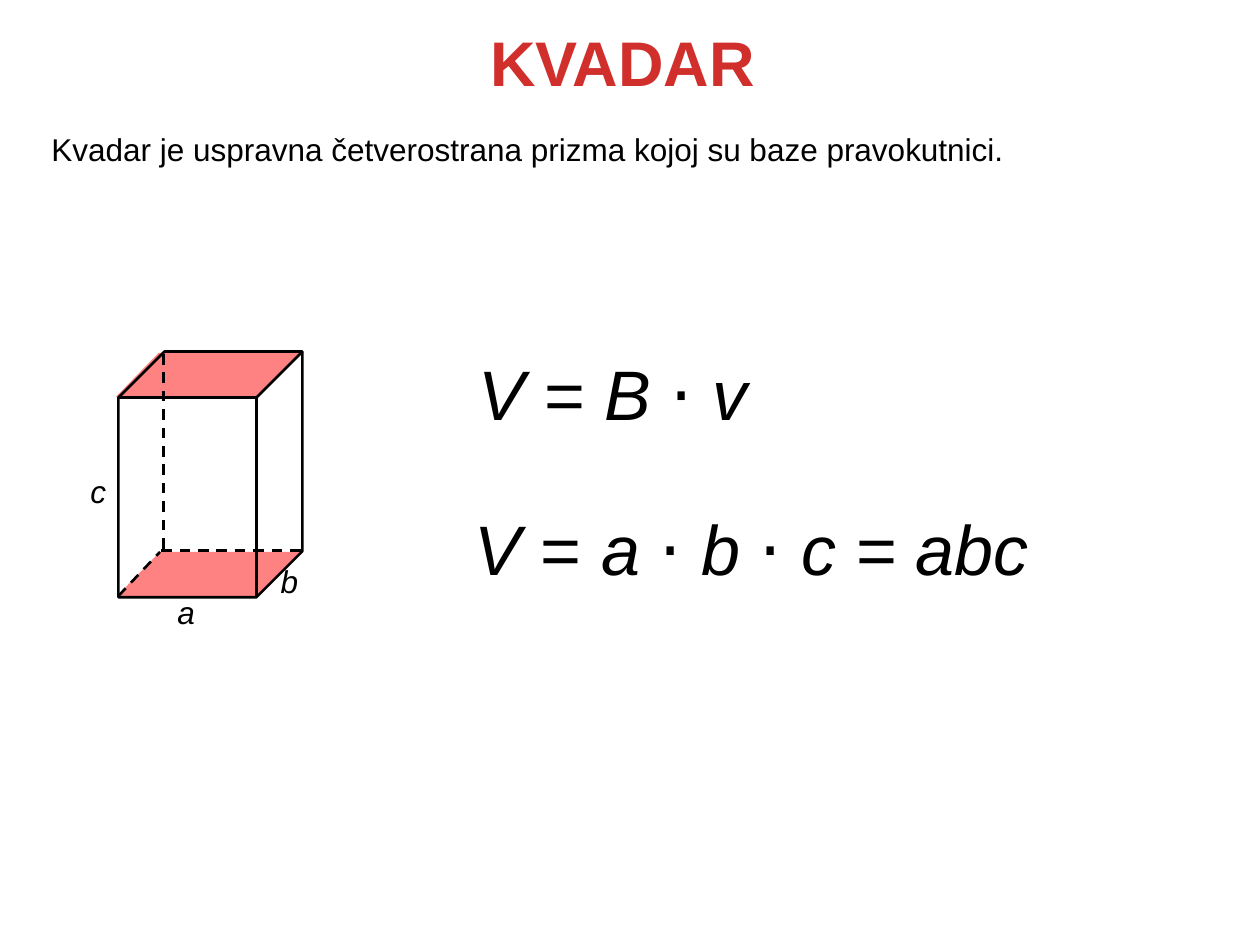
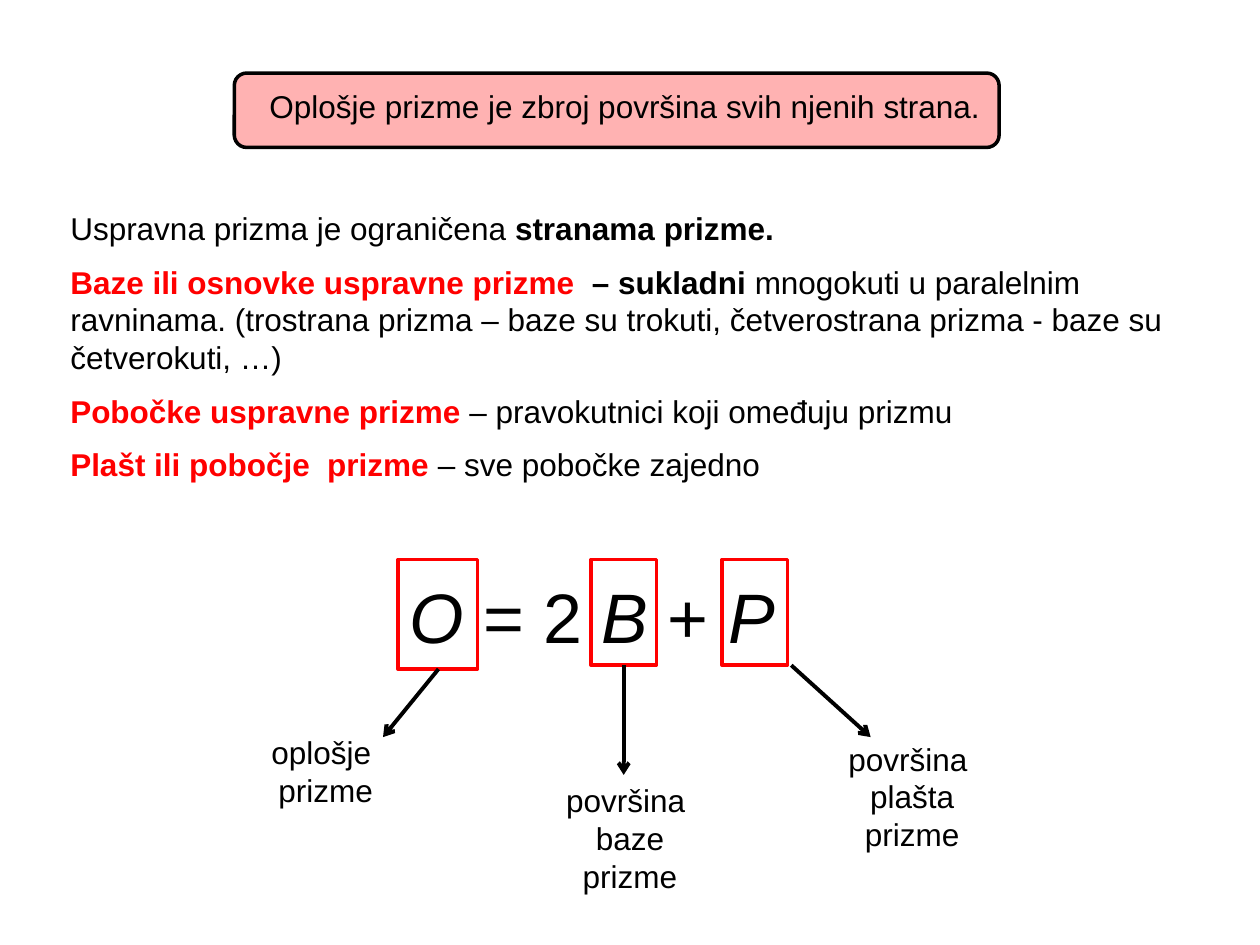
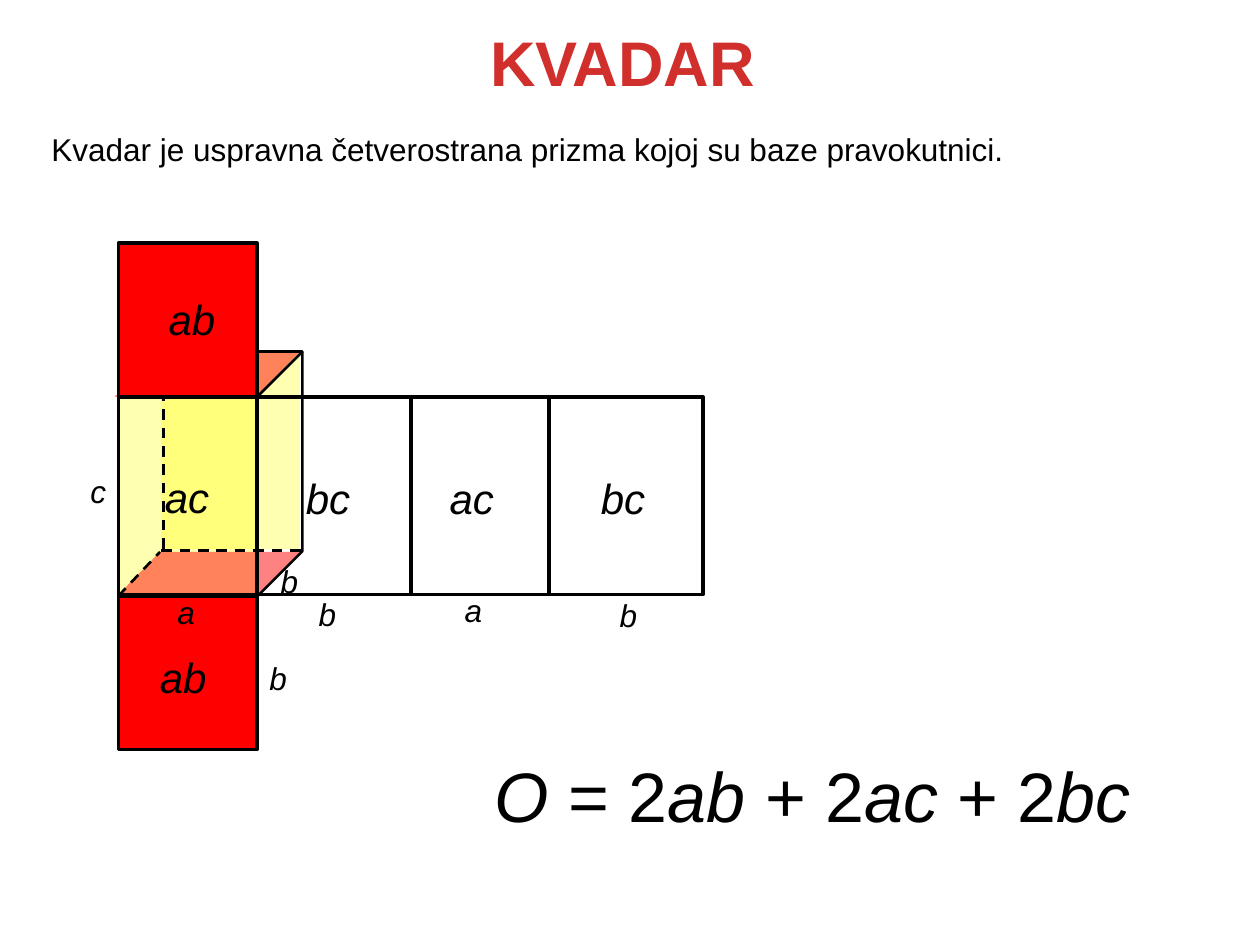
from pptx import Presentation
from pptx.dml.color import RGBColor
from pptx.enum.dml import MSO_LINE
from pptx.enum.shapes import MSO_CONNECTOR, MSO_SHAPE
from pptx.enum.text import MSO_AUTO_SIZE, PP_ALIGN
from pptx.oxml.ns import qn
from pptx.util import Inches, Pt
from lxml.etree import SubElement

HUES = {"black": "000000", "red": "FF0000", "title": "D02F2C", "yellow": "FFFF00"}
FONT = "Arial"


def write(slide, x, y, w, h, paras, size=18, marks="", hue="black",
          align=None, wrap=True):
    """Add a text box. A paragraph is a string or a list of (text, marks) runs.

    Marks are letters: b for bold, i for italic, r for red.
    """
    box = slide.shapes.add_textbox(Inches(x), Inches(y), Inches(w), Inches(h))
    frame = box.text_frame
    frame.word_wrap = wrap
    frame.auto_size = MSO_AUTO_SIZE.SHAPE_TO_FIT_TEXT
    for n, runs in enumerate(paras):
        para = frame.paragraphs[0] if n == 0 else frame.add_paragraph()
        para.alignment = align
        font = para.font
        font.name, font.size = FONT, Pt(size)
        font.bold, font.italic = "b" in marks, "i" in marks
        font.color.rgb = RGBColor.from_string(HUES[hue])
        if isinstance(runs, str):
            para.add_run().text = runs
            continue
        if n:
            para.space_before = Pt(size / 2)
        for text, style in runs:
            run = para.add_run()
            run.text = text
            run.font.bold, run.font.italic = "b" in style, "i" in style
            if "r" in style:
                run.font.color.rgb = RGBColor.from_string(HUES["red"])


def draw(slide, kind, x, y, w, h, fill=None, alpha=100, line=None, width=2):
    """Add a preset shape; alpha is the opacity of its fill in percent."""
    shape = slide.shapes.add_shape(kind, Inches(x), Inches(y), Inches(w), Inches(h))
    shape.shadow.inherit = False
    if fill:
        shape.fill.solid()
        shape.fill.fore_color.rgb = RGBColor.from_string(HUES[fill])
        if alpha < 100:
            tint = shape.element.spPr.find(".//" + qn("a:srgbClr"))
            SubElement(tint, qn("a:alpha")).set("val", str(alpha * 1000))
    else:
        shape.fill.background()
    if line:
        shape.line.color.rgb = RGBColor.from_string(HUES[line])
        shape.line.width = Pt(width)
    else:
        shape.line.fill.background()
    return shape


deck = Presentation()
deck.slide_width, deck.slide_height = Inches(10), Inches(7.5)
volume, prism, net = [deck.slides.add_slide(deck.slide_layouts[6]) for _ in range(3)]
RECT = MSO_SHAPE.RECTANGLE

# Front and back faces of the cuboid
for x, y in [(0.93, 3.14), (1.28, 2.78)]:
    draw(net, RECT, x, y, 1.1, 1.58, "yellow", 30)

# Title, definition and cuboid
for slide, left in [(volume, 0.92), (net, 0.91)]:
    write(slide, 2.54, 0.14, 4.8, 0.71, ["KVADAR"], 36, "b", "title", PP_ALIGN.CENTER)
    write(slide, 0.31, 0.98, 9.33, 0.4,
          ["Kvadar je uspravna četverostrana prizma kojoj su baze pravokutnici."])
    for x, y in [(left, 2.8), (0.93, 4.38)]:
        base = draw(slide, MSO_SHAPE.PARALLELOGRAM, x, y, 1.46, 0.35, "red", 49)
        base.adjustments[0] = 0.97
    draw(slide, MSO_SHAPE.CUBE, 0.94, 2.79, 1.46, 1.95, line="black", width=1.5)

# Summary of the surface area
draw(prism, MSO_SHAPE.ROUNDED_RECTANGLE, 1.86, 0.58, 6.07, 0.59, "red", 30, "black")
write(prism, 2.04, 0.64, 5.93, 0.4,
      ["Oplošje prizme je zbroj površina svih njenih strana."])
write(prism, 0.46, 1.61, 9.14, 2.37, [
    [("Uspravna prizma je ograničena ", ""), ("stranama prizme.", "b")],
    [("Baze ili osnovke uspravne prizme ", "br"), (" – sukladni ", "b"),
     ("mnogokuti u paralelnim ravninama. (trostrana prizma – baze su trokuti, "
      "četverostrana prizma - baze su četverokuti, …)", "")],
    [("Pobočke uspravne prizme", "br"), (" – pravokutnici koji omeđuju prizmu", "")],
    [("Plašt ili pobočje  prizme", "br"), (" – sve pobočke zajedno", "")],
])
for x, y, w, h, words in [
    (1.98, 5.77, 1.21, 0.71, ["oplošje ", "prizme"]),
    (4.3, 6.15, 1.4, 1.01, ["površina ", "baze", "prizme"]),
    (6.54, 5.82, 1.4, 1.01, ["površina ", "plašta", "prizme"]),
]:
    write(prism, x, y, w, h, words, align=PP_ALIGN.CENTER)
for x, w, h in [(3.16, 0.63, 0.87), (4.69, 0.52, 0.84), (5.73, 0.52, 0.84)]:
    draw(prism, RECT, x, 4.44, w, h, line="red")

# Hidden edges of the cuboids, and arrows from the formula to its terms
edges = [(1.3, 2.81, 1.3, 4.38), (1.28, 4.37, 2.39, 4.37), (0.94, 4.73, 1.27, 4.38)]
arrows = [(3.48, 5.31, 3.04, 5.85), (4.95, 5.28, 4.95, 6.15), (6.28, 5.28, 6.91, 5.85)]
for slide, ends in [(volume, edges), (prism, arrows), (net, edges)]:
    for spot in ends:
        link = slide.shapes.add_connector(MSO_CONNECTOR.STRAIGHT, *map(Inches, spot))
        SubElement(link.element.spPr, qn("a:effectLst"))
        link.line.color.rgb = RGBColor.from_string(HUES["black"])
        if slide is prism:
            link.line.width = Pt(2.25)
            SubElement(link.line._get_or_add_ln(), qn("a:tailEnd")).set("type", "arrow")
        else:
            link.line.width = Pt(1.5)
            link.line.dash_style = MSO_LINE.DASH

# Unfolded net: two bases, then four sides in a row
a, b, c = 1.1, 1.22, 1.57
for y in [1.93, 4.73]:
    draw(net, RECT, 0.94, y, a, b, "red", line="black")
x = 0.94
for w in [a, b, a, b]:
    draw(net, RECT, x, 3.15, w, c, line="black")
    x += w
for x, y, text in [
    (1.24, 2.28, "ab"), (1.17, 5.12, "ab"), (1.21, 3.69, "ac"),
    (2.33, 3.7, "bc"), (3.47, 3.7, "ac"), (4.67, 3.7, "bc"),
]:
    write(net, x, y, 0.57, 0.5, [text], 24, "i", wrap=False)

# Edge letters
letters = [(1.31, 4.66, "a"), (2.13, 4.41, "b"), (0.62, 3.7, "c")]
extra = [(2.04, 5.18, "b"), (2.43, 4.67, "b"), (3.59, 4.64, "a"), (4.82, 4.68, "b")]
for slide, spots in [(volume, letters), (net, letters + extra)]:
    for x, y, text in spots:
        write(slide, x, y, 0.63, 0.4, [text], marks="i")

# Formulas
for slide, x, y, w, runs in [
    (volume, 3.7, 2.73, 2.64,
     [("V", "i"), (" = ", ""), ("B ", "i"), ("⋅ ", ""), ("v", "i")]),
    (volume, 3.67, 3.96, 5.93,
     [("V", "i"), (" = ", ""), ("a ⋅ b ", "i"), ("⋅ ", ""), ("c = abc", "i")]),
    (prism, 3.15, 4.5, 3.2,
     [("O", "i"), (" = 2 ", ""), ("B", "i"), (" + ", ""), ("P", "i")]),
    (net, 3.83, 5.92, 5.76,
     [("O", "i"), (" = 2", ""), ("ab", "i"), (" + 2", ""), ("ac", "i"),
      (" + 2", ""), ("bc", "i")]),
]:
    write(slide, x, y, w, 0.77, [runs], 40)

deck.save("out.pptx")
